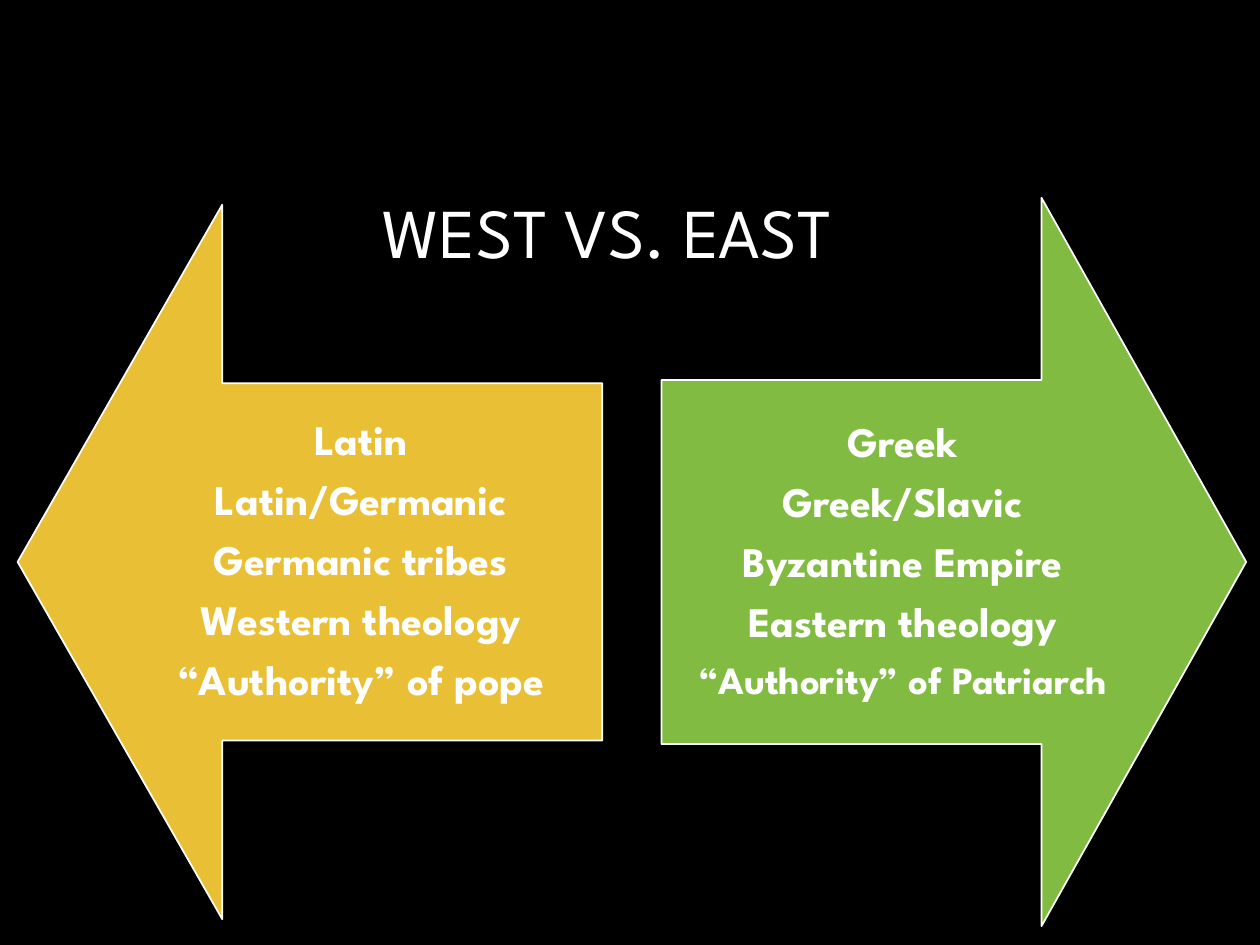
from dataclasses import dataclass

from pptx import Presentation
from pptx import util as u
from pptx.dml.color import RGBColor
from pptx.enum import shapes, text

WIDTH, HEIGHT = 10, 7.5
COLORS = {"back": "000000", "text": "FFFFFF", "west": "E9BF35", "east": "81BB42"}
CENTER_Y = 4.46 / HEIGHT
ARROW_LENGTH = 4.64 / HEIGHT
LABEL_WIDTH = 3.83 / WIDTH
TITLE_FORMAT = {"name": "League Spartan", "size": u.Pt(40), "bold": False}
LABEL_FORMAT = {"name": "League Spartan", "size": u.Pt(24), "bold": True}
FRAME_FORMAT = {
    "word_wrap": True,
    "auto_size": text.MSO_AUTO_SIZE.NONE,
    "vertical_anchor": text.MSO_ANCHOR.MIDDLE,
}
LABEL_MARGINS = {
    f"margin_{side}": u.Inches(0.19) for side in ("left", "top", "right", "bottom")
}
LINE_FORMAT = {"alignment": text.PP_ALIGN.CENTER, "line_spacing": 0.9}


@dataclass
class Side:
    color: str
    rotation: int
    arrow_center: float
    arrow_span: float
    label_left: float
    label_height: float
    lines: tuple[str, ...]
    last_size: int


SIDES = (
    Side("west", 270, 2.46 / WIDTH, 5.67 / WIDTH, 0.95 / WIDTH, 2.83 / HEIGHT,
         ("Latin", "Latin/Germanic", "Germanic tribes", "Western theology",
          "“Authority” of pope"), 24),
    Side("east", 90, 7.57 / WIDTH, 5.78 / WIDTH, 5.25 / WIDTH, 2.89 / HEIGHT,
         ("Greek", "Greek/Slavic", "Byzantine Empire", "Eastern theology",
          "“Authority” of Patriarch"), 22),
)


def rgb(name: str) -> RGBColor:
    return RGBColor.from_string(COLORS[name])


def area(left: float, top: float, width: float, height: float) -> list[int]:
    shares = ((left, WIDTH), (top, HEIGHT), (width, WIDTH), (height, HEIGHT))
    return [u.Inches(share * side) for share, side in shares]


def apply(target, values: dict) -> None:
    for name, value in values.items():
        setattr(target, name, value)


def write(para, words: str, values: dict) -> None:
    apply(para, LINE_FORMAT)
    span = para.add_run()
    span.text = words
    apply(span.font, values)
    span.font.color.rgb = rgb("text")


def draw_title(page) -> None:
    box = page.shapes.title
    box.left, box.top, box.width, box.height = area(0.15, 0.156, 0.706, 0.188)
    apply(box.text_frame, FRAME_FORMAT | {"margin_right": u.Inches(0.52)})
    write(box.text_frame.paragraphs[0], "WEST VS. EAST", TITLE_FORMAT)


def draw_arrow(group, side: Side) -> None:
    arrow = group.shapes.add_shape(
        shapes.MSO_SHAPE.UP_ARROW,
        *area(side.arrow_center - side.arrow_span / 2, CENTER_Y - ARROW_LENGTH / 2,
              side.arrow_span, ARROW_LENGTH))
    arrow.rotation = side.rotation
    arrow.adjustments[0], arrow.adjustments[1] = 0.5, 0.35
    arrow.shadow.inherit = False
    arrow.fill.solid()
    arrow.fill.fore_color.rgb = rgb(side.color)
    arrow.line.color.rgb = rgb("text")
    arrow.line.width = u.Pt(1)


def draw_label(group, side: Side) -> None:
    box = group.shapes.add_textbox(
        *area(side.label_left, CENTER_Y - side.label_height / 2,
              LABEL_WIDTH, side.label_height))
    frame = box.text_frame
    apply(frame, FRAME_FORMAT | LABEL_MARGINS)
    for index, words in enumerate(side.lines):
        para = frame.add_paragraph() if index else frame.paragraphs[0]
        size = side.last_size if words == side.lines[-1] else 24
        para.space_after = u.Pt(0.35 * size)
        write(para, words, LABEL_FORMAT | {"size": u.Pt(size)})


def main() -> None:
    deck = Presentation()
    deck.slide_width, deck.slide_height = u.Inches(WIDTH), u.Inches(HEIGHT)
    page = deck.slides.add_slide(deck.slide_layouts[5])
    page.background.fill.solid()
    page.background.fill.fore_color.rgb = rgb("back")
    draw_title(page)
    group = page.shapes.add_group_shape()
    for side in SIDES:
        draw_arrow(group, side)
        draw_label(group, side)
    deck.save("out.pptx")


if __name__ == "__main__":
    main()
